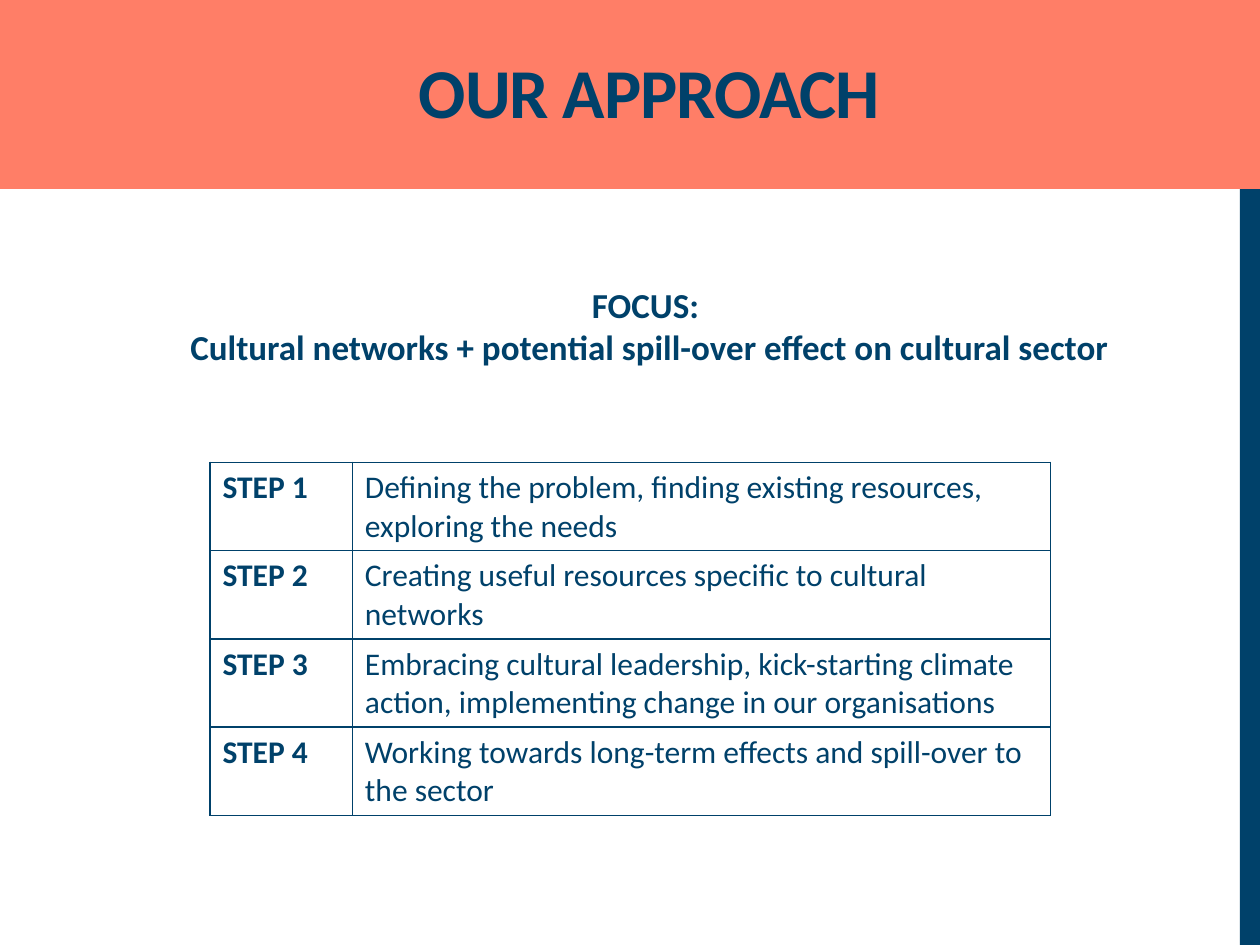
import pptx
import pptx.util
import pptx.dml.color
import pptx.enum.shapes
import pptx.enum.text
import pptx.oxml

NAVY, CORAL = "00416A", "FF7E67"
WIDE, HIGH = 10, 7.5
HEAD, EDGE = 1.5, 0.16
TITLE = "OUR APPROACH"
FOCUS = ["FOCUS: ", "Cultural networks + potential spill-over effect on cultural sector"]
STEPS = [
    "Defining the problem, finding existing resources, exploring the needs",
    "Creating useful resources specific to cultural networks",
    "Embracing cultural leadership, kick-starting climate action, implementing change in our organisations",
    "Working towards long-term effects and spill-over to the sector",
]
COLS, ROW = (1.13, 5.54), 0.7
NS = "http://schemas.openxmlformats.org/drawingml/2006/main"


def color(code):
    return pptx.dml.color.RGBColor.from_string(code)


def box(*sides):
    return [pptx.util.Inches(side) for side in sides]


def write(para, text, size, bold=True):
    run = para.add_run()
    run.text = text
    font = run.font
    font.name, font.size, font.bold = "Calibri", pptx.util.Pt(size), bold
    font.color.rgb = color(NAVY)
    return run


def block(slide, place, code):
    shape = slide.shapes.add_shape(pptx.enum.shapes.MSO_SHAPE.RECTANGLE, *box(*place))
    shape.shadow.inherit = False
    shape.fill.solid()
    shape.fill.fore_color.rgb = color(code)
    shape.line.fill.background()
    return shape


def border(cell):
    props = cell._tc.get_or_add_tcPr()
    for spot, side in enumerate("LRTB"):
        props.insert(spot, pptx.oxml.parse_xml(
            f'<a:ln{side} xmlns:a="{NS}" w="12700"><a:solidFill>'
            f'<a:srgbClr val="{NAVY}"/></a:solidFill></a:ln{side}>'))


def head(slide):
    title = slide.shapes.title
    for place, code in (((WIDE - EDGE, HEAD, EDGE, HIGH - HEAD), NAVY),
                        ((0, 0, WIDE, HEAD), CORAL)):
        title.element.addprevious(block(slide, place, code).element)
    title.left, title.top, title.width, title.height = box(1.85, 0.39, 6.61, 0.71)
    frame = title.text_frame
    frame.auto_size = pptx.enum.text.MSO_AUTO_SIZE.NONE
    frame.vertical_anchor = pptx.enum.text.MSO_ANCHOR.BOTTOM
    para = frame.paragraphs[0]
    para.alignment = pptx.enum.text.PP_ALIGN.CENTER
    write(para, TITLE, 40).font._element.set("spc", "-60")


def focus(slide):
    frame = slide.shapes.add_textbox(*box(1.22, 1.9, 7.87, 1.38)).text_frame
    frame.word_wrap = True
    frame.margin_top = pptx.util.Inches(0.35)
    for row, text in enumerate(FOCUS):
        para = frame.add_paragraph() if row else frame.paragraphs[0]
        para.alignment = pptx.enum.text.PP_ALIGN.CENTER
        write(para, text, 20)


def steps(slide):
    count = len(STEPS)
    place = box(WIDE / 6, 3.67, sum(COLS), ROW * count)
    table = slide.shapes.add_table(count, len(COLS), *place).table
    table.first_row = table.horz_banding = False
    for col, width in zip(table.columns, COLS):
        col.width = pptx.util.Inches(width)
    for row, text in enumerate(STEPS):
        for col, words in enumerate((f"STEP {row + 1}", text)):
            cell = table.cell(row, col)
            cell.fill.background()
            border(cell)
            write(cell.text_frame.paragraphs[0], words, 18, col == 0)


def main():
    """Build the approach slide and save it."""
    deck = pptx.Presentation()
    deck.slide_width, deck.slide_height = box(WIDE, HIGH)
    slide = deck.slides.add_slide(deck.slide_layouts[5])
    head(slide)
    focus(slide)
    steps(slide)
    deck.save("out.pptx")


if __name__ == "__main__":
    main()
